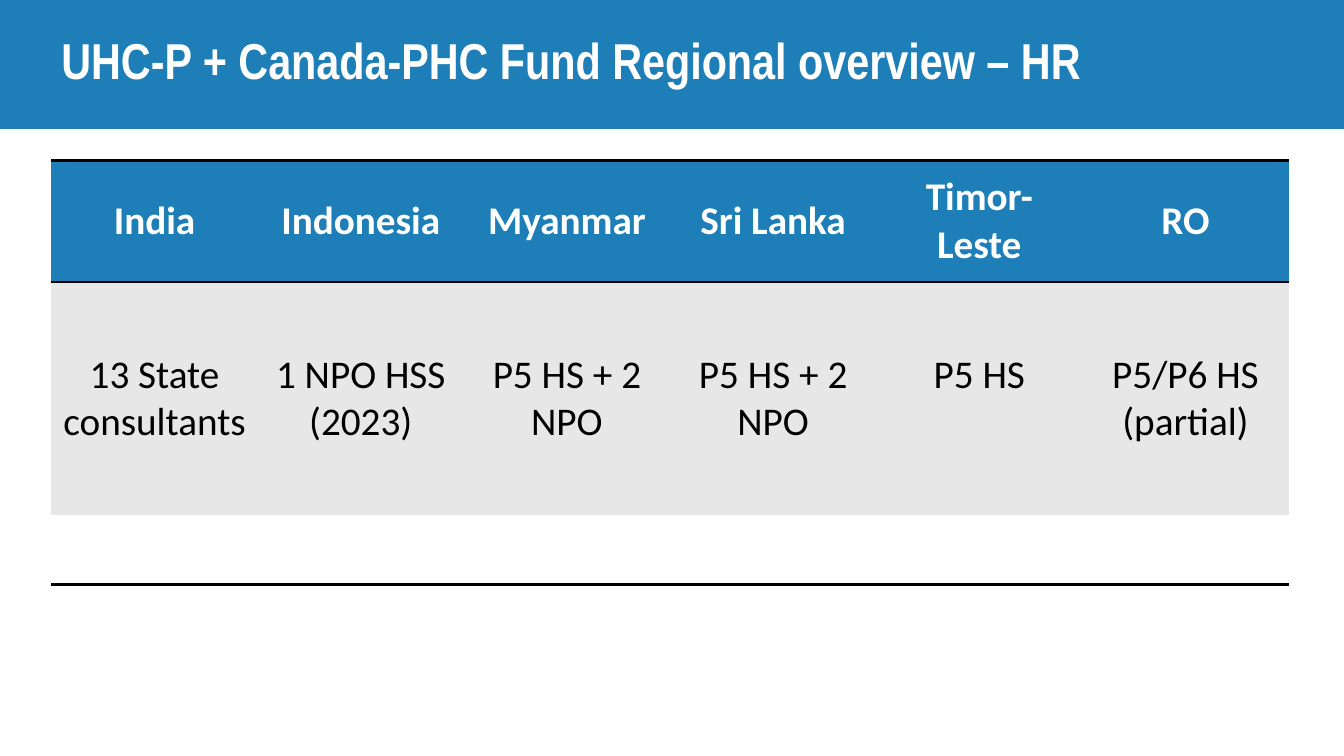
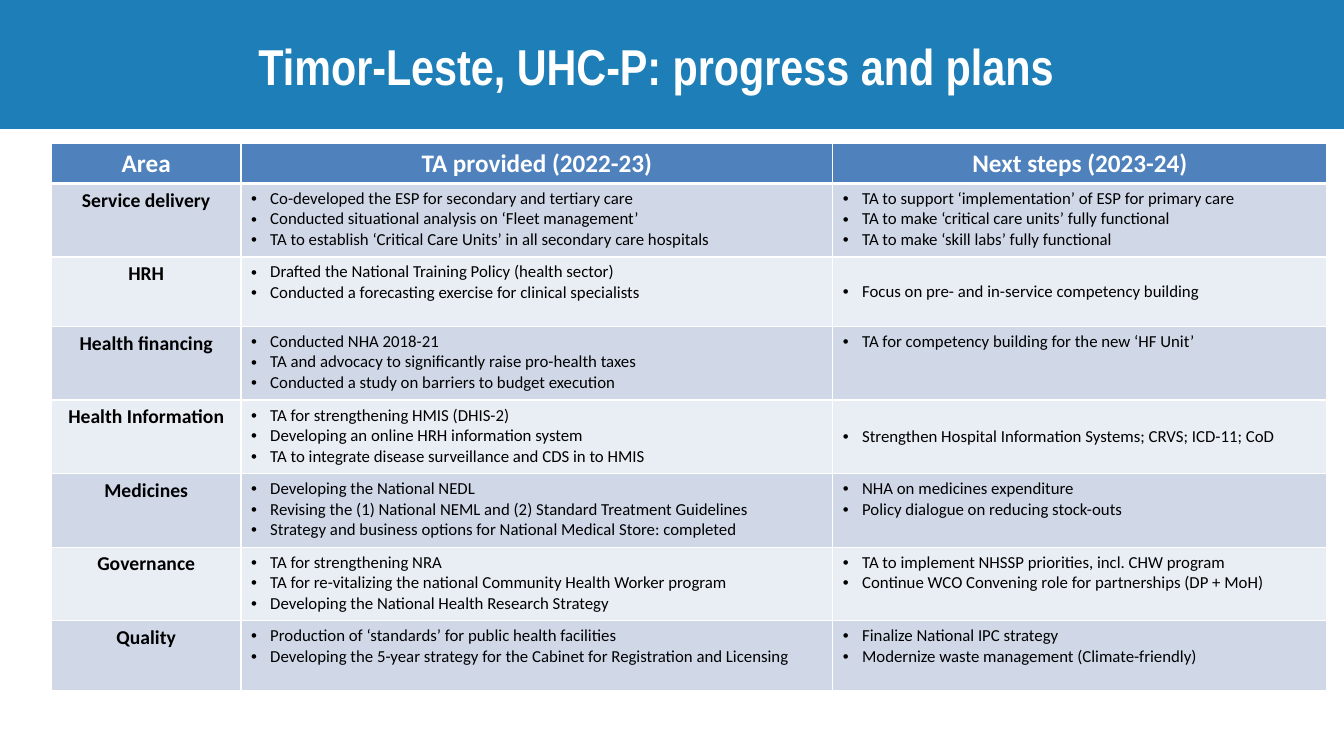
"""Build two slides on regional staffing and Timor-Leste progress."""
from dataclasses import dataclass, replace
from typing import Optional

from lxml import etree
from pptx import Presentation
from pptx import util as u
from pptx.dml.color import RGBColor
from pptx.enum import shapes, text
from pptx.oxml.ns import qn

WIDTH, HEIGHT = u.Inches(13.33), u.Inches(7.5)
COLORS = {
    "band": "1E7FB8", "white": "FFFFFF", "black": "000000", "grey": "E7E7E7",
    "header": "4F81BD", "odd": "D0D8E8", "even": "E9EDF4",
}
LEFT = 3.83
BAND_HEIGHT = 17.07
TITLE_WIDTH = 90.02
BULLET_INDENT = u.Inches(0.19)
CENTER, START = text.PP_ALIGN.CENTER, text.PP_ALIGN.LEFT
TOP, MIDDLE = text.MSO_ANCHOR.TOP, text.MSO_ANCHOR.MIDDLE


@dataclass(frozen=True)
class TextStyle:
    """Look of the words in a box or cell."""
    size: int
    color: str = "black"
    bold: bool = False
    align: text.PP_ALIGN = CENTER
    anchor: text.MSO_ANCHOR = TOP
    bulleted: bool = False
    font: str = "Calibri"


@dataclass(frozen=True)
class Edge:
    """Colour and points of a cell border."""
    color: str
    width: float


@dataclass(frozen=True)
class Borders:
    """Borders of a cell, where None means no line."""
    side: Optional[Edge] = None
    top: Optional[Edge] = None
    bottom: Optional[Edge] = None


@dataclass(frozen=True)
class Area:
    """One row of the progress table."""
    name: str
    provided: tuple[str, ...]
    planned: tuple[str, ...]
    planned_anchor: text.MSO_ANCHOR = TOP


TITLE = TextStyle(36, "white", True, anchor=MIDDLE, font="Arial Narrow")
STAFF_HEADER = TextStyle(28, "white", True, anchor=MIDDLE)
STAFF_BODY = TextStyle(28, anchor=MIDDLE)
AREA_HEADER = TextStyle(18, "white", True)
AREA_NAME = TextStyle(14, bold=True)
AREA_BODY = TextStyle(12, align=START, bulleted=True)

STAFF = {
    "India": "13 State consultants",
    "Indonesia": "1 NPO HSS (2023)",
    "Myanmar": "P5 HS + 2 NPO",
    "Sri Lanka": "P5 HS + 2 NPO",
    "Timor-Leste": "P5 HS",
    "RO": "P5/P6 HS (partial)",
}
AREA_HEADINGS = ("Area", "TA provided (2022-23)", "Next steps (2023-24)")
AREAS = (
    Area("Service delivery",
         ("Co-developed the ESP for secondary and tertiary care",
          "Conducted situational analysis on ‘Fleet management’",
          "TA to establish ‘Critical Care Units’ in all secondary care hospitals"),
         ("TA to support ‘implementation’ of ESP for primary care",
          "TA to make ‘critical care units’ fully functional",
          "TA to make ‘skill labs’ fully functional")),
    Area("HRH",
         ("Drafted the National Training Policy (health sector)",
          "Conducted a forecasting exercise for clinical specialists"),
         ("Focus on pre- and in-service competency building",), MIDDLE),
    Area("Health financing",
         ("Conducted NHA 2018-21",
          "TA and advocacy to significantly raise pro-health taxes",
          "Conducted a study on barriers to budget execution"),
         ("TA for competency building for the new ‘HF Unit’",)),
    Area("Health Information",
         ("TA for strengthening HMIS (DHIS-2)",
          "Developing an online HRH information system",
          "TA to integrate disease surveillance and CDS in to HMIS"),
         ("Strengthen Hospital Information Systems; CRVS; ICD-11; CoD",), MIDDLE),
    Area("Medicines",
         ("Developing the National NEDL",
          "Revising the (1) National NEML and (2) Standard Treatment Guidelines",
          "Strategy and business options for National Medical Store: completed"),
         ("NHA on medicines expenditure",
          "Policy dialogue on reducing stock-outs")),
    Area("Governance",
         ("TA for strengthening NRA",
          "TA for re-vitalizing the national Community Health Worker program",
          "Developing the National Health Research Strategy"),
         ("TA to implement NHSSP priorities, incl. CHW program",
          "Continue WCO Convening role for partnerships (DP + MoH)")),
    Area("Quality",
         ("Production of ‘standards’ for public health facilities",
          "Developing the 5-year strategy for the Cabinet for Registration and Licensing"),
         ("Finalize National IPC strategy",
          "Modernize waste management (Climate-friendly)")),
)


def across(share: float) -> int:
    """Turn a percentage of the slide width into a length."""
    return round(WIDTH * share / 100)


def down(share: float) -> int:
    """Turn a percentage of the slide height into a length."""
    return round(HEIGHT * share / 100)


def paint(fill, color: str) -> None:
    """Give a fill one solid colour."""
    fill.solid()
    fill.fore_color.rgb = RGBColor.from_string(COLORS[color])


def add_bullet(para) -> None:
    """Give a paragraph a hanging bullet."""
    properties = para._p.get_or_add_pPr()
    properties.set("marL", str(BULLET_INDENT))
    properties.set("indent", str(-BULLET_INDENT))
    etree.SubElement(properties, qn("a:buFont"), typeface="Arial")
    etree.SubElement(properties, qn("a:buChar"), char="•")


def write(frame, lines: tuple[str, ...], style: TextStyle) -> None:
    """Write one paragraph per line in the given style."""
    for index, line in enumerate(lines):
        para = frame.add_paragraph() if index else frame.paragraphs[0]
        para.alignment = style.align
        if style.bulleted:
            add_bullet(para)
        span = para.add_run()
        span.text = line
        span.font.name = style.font
        span.font.size = u.Pt(style.size)
        span.font.bold = style.bold
        span.font.color.rgb = RGBColor.from_string(COLORS[style.color])


def add_border(cell, tag: str, edge: Optional[Edge]) -> None:
    """Draw or clear one border of a cell."""
    line = etree.SubElement(cell._tc.get_or_add_tcPr(), qn(tag))
    if edge is None:
        etree.SubElement(line, qn("a:noFill"))
        return
    line.set("w", str(u.Pt(edge.width)))
    solid = etree.SubElement(line, qn("a:solidFill"))
    etree.SubElement(solid, qn("a:srgbClr"), val=COLORS[edge.color])


def fill_cell(cell, lines: tuple[str, ...], style: TextStyle, color: str,
              borders: Borders) -> None:
    """Set the borders, fill and words of a cell."""
    for tag, edge in (("a:lnL", borders.side), ("a:lnR", borders.side),
                      ("a:lnT", borders.top), ("a:lnB", borders.bottom)):
        add_border(cell, tag, edge)
    paint(cell.fill, color)
    cell.vertical_anchor = style.anchor
    write(cell.text_frame, lines, style)


def add_grid(page, top: float, columns: list[float], rows: list[float]):
    """Add a plain table with column and row shares of the slide."""
    table = page.shapes.add_table(
        len(rows), len(columns), across(LEFT), down(top),
        across(sum(columns)), down(sum(rows))).table
    table.horz_banding = False
    for column, share in zip(table.columns, columns):
        column.width = across(share)
    for row, share in zip(table.rows, rows):
        row.height = down(share)
    return table


def add_page(deck, title: str, top: float, height: float, align: text.PP_ALIGN):
    """Add a blank slide with the blue band and its title."""
    page = deck.slides.add_slide(deck.slide_layouts[6])
    band = page.shapes.add_shape(
        shapes.MSO_SHAPE.RECTANGLE, 0, 0, WIDTH, down(BAND_HEIGHT))
    band.shadow.inherit = False
    paint(band.fill, "band")
    band.line.fill.background()
    box = page.shapes.add_textbox(
        across(LEFT), down(top), across(TITLE_WIDTH), down(height))
    box.text_frame.word_wrap = True
    box.text_frame.vertical_anchor = TITLE.anchor
    write(box.text_frame, (title,), replace(TITLE, align=align))
    return page


def add_staff_page(deck) -> None:
    """Add the regional staffing slide."""
    page = add_page(deck, "UHC-P + Canada-PHC Fund Regional overview – HR",
                    1.73, 12.13, START)
    table = add_grid(page, 21.2, [92.05 / len(STAFF)] * len(STAFF),
                     [16.13, 30.8, 9.2])
    rule = Edge("black", 2)
    for column, (office, posts) in enumerate(STAFF.items()):
        fill_cell(table.cell(0, column), (office,), STAFF_HEADER, "band",
                  Borders(top=rule, bottom=rule))
        fill_cell(table.cell(1, column), (posts,), STAFF_BODY, "grey",
                  Borders(top=rule))
        fill_cell(table.cell(2, column), (), STAFF_BODY, "white",
                  Borders(bottom=rule))
    single_line = table.cell(1, list(STAFF).index("Timor-Leste"))
    single_line.margin_bottom = down(7)


def add_progress_page(deck) -> None:
    """Add the Timor-Leste progress slide."""
    page = add_page(deck, "Timor-Leste, UHC-P: progress and plans",
                    0.8, 15.6, CENTER)
    heights = [9.73 if len(area.provided) > 2 else 9.2 for area in AREAS]
    table = add_grid(page, 18.93, [14.1, 44.04, 36.76], [4.93, *heights])
    thin, thick = Edge("white", 1), Edge("white", 3)
    for column, heading in enumerate(AREA_HEADINGS):
        fill_cell(table.cell(0, column), (heading,), AREA_HEADER, "header",
                  Borders(thin, thin, thick))
    for row, area in enumerate(AREAS, 1):
        color = "odd" if row % 2 else "even"
        borders = Borders(thin, thick if row == 1 else thin, thin)
        entries = (
            ((area.name,), AREA_NAME),
            (area.provided, AREA_BODY),
            (area.planned, replace(AREA_BODY, anchor=area.planned_anchor)),
        )
        for column, (lines, style) in enumerate(entries):
            fill_cell(table.cell(row, column), lines, style, color, borders)


def main() -> None:
    """Build and save the deck."""
    deck = Presentation()
    deck.slide_width, deck.slide_height = WIDTH, HEIGHT
    add_staff_page(deck)
    add_progress_page(deck)
    deck.save("out.pptx")


if __name__ == "__main__":
    main()
